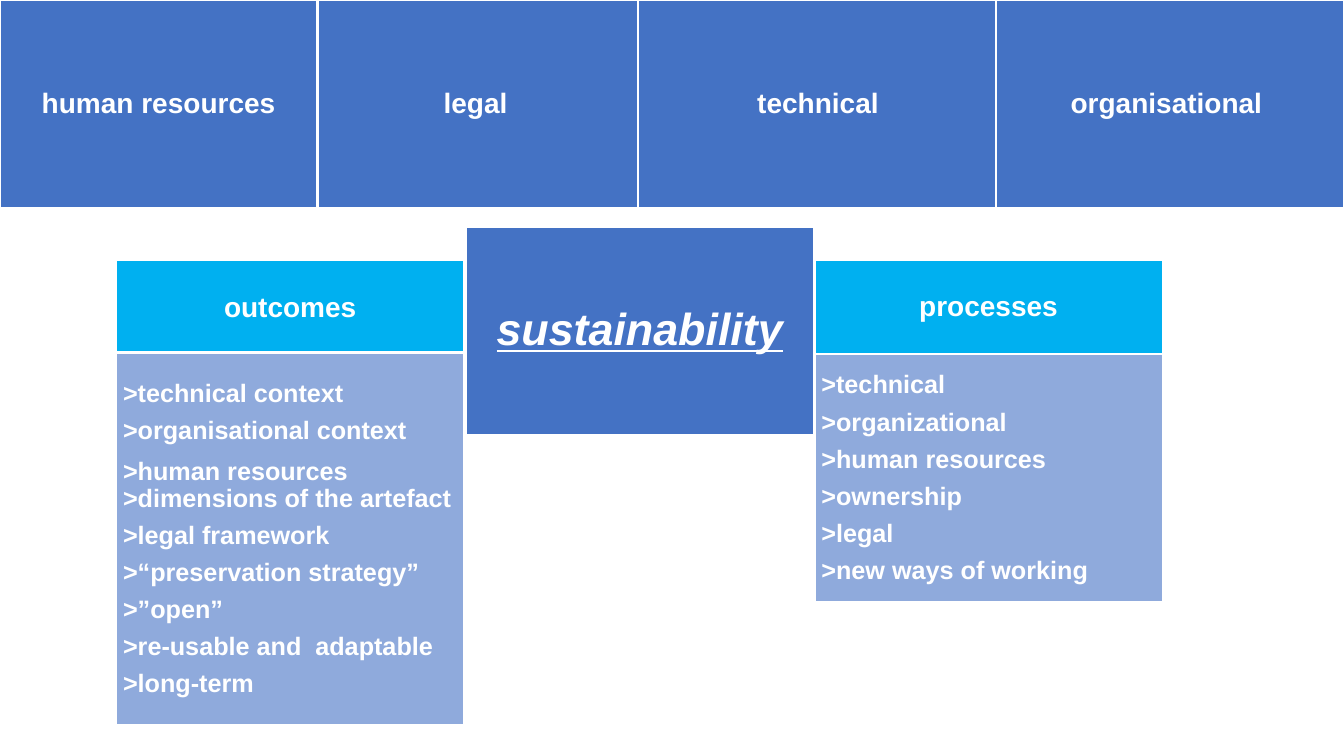
import pptx
import pptx.dml.color
import pptx.enum.text
import pptx.util
from pptx.util import Cm
from lxml import etree

COLOURS = {"dimension": "4472C4", "heading": "00B0F0", "list": "8FAADC", "white": "FFFFFF"}
ALIGN = pptx.enum.text.PP_ALIGN
BOX_WIDTH = 8.79
BAND_HEIGHT = 5.26


def rgb(name):
    return pptx.dml.color.RGBColor.from_string(COLOURS[name])


def fill_box(box, place, colour, lines, size, inset, align=ALIGN.CENTER):
    box.left, box.top, box.width, box.height = [Cm(length) for length in place]
    box.fill.solid()
    box.fill.fore_color.rgb = rgb(colour)
    box.line.color.rgb = rgb("white")
    box.line.width = pptx.util.Pt(2)
    frame = box.text_frame
    frame.text = "\n".join(lines)
    frame.word_wrap = True
    frame.auto_size = pptx.enum.text.MSO_AUTO_SIZE.NONE
    frame.vertical_anchor = pptx.enum.text.MSO_ANCHOR.MIDDLE
    frame.margin_left = frame.margin_right = Cm(inset)
    frame.margin_top = frame.margin_bottom = Cm(inset)
    for paragraph in frame.paragraphs:
        properties = paragraph._p.get_or_add_pPr()
        properties.set("marL", "0")
        properties.set("indent", "0")
        etree.SubElement(properties, pptx.oxml.ns.qn("a:buNone"))
        paragraph.alignment = align
        paragraph.line_spacing = 0.9
        paragraph.space_before = pptx.util.Pt(0)
        paragraph.space_after = pptx.util.Pt(7)
        for run in paragraph.runs:
            run.font.name = "Arial"
            run.font.size = pptx.util.Pt(size)
            run.font.bold = True
            run.font.color.rgb = rgb("white")


presentation = pptx.Presentation()
presentation.slide_width = Cm(33.87)
presentation.slide_height = Cm(19.05)
slide = presentation.slides.add_slide(presentation.slide_layouts[3])
sustainability, outcomes_list, processes_list = slide.placeholders

dimensions = [
    ("legal", 7.59, BOX_WIDTH),
    ("technical", 16.08, 9.07),
    ("organisational ", 25.1, BOX_WIDTH),
    ("human resources", 0, 8),
]
for dimension, left, width in dimensions:
    band = slide.shapes.add_shape(pptx.enum.shapes.MSO_SHAPE.RECTANGLE, 0, 0, 0, 0)
    band.shadow.inherit = False
    fill_box(band, (left, 0, width, BAND_HEIGHT), "dimension", [dimension], 20, 0.2)

fill_box(sustainability, (11.73, 5.72, BOX_WIDTH, BAND_HEIGHT), "dimension",
         ["sustainability"], 32, 0.33)
topic_font = sustainability.text_frame.paragraphs[0].runs[0].font
topic_font.italic = True
topic_font.underline = True

columns = [
    ("processes", processes_list, 20.52, 2.41, 8.92, 6.27, [
        ">technical",
        ">organizational",
        ">human resources",
        ">ownership",
        ">legal",
        ">new ways of working",
    ]),
    ("outcomes", outcomes_list, 2.92, 2.51, 8.89, 9.4, [
        ">technical context",
        ">organisational context",
        ">human resources",
        ">dimensions of the artefact",
        ">legal framework",
        ">“preservation strategy”",
        ">”open”",
        ">re-usable and  adaptable",
        ">long-term",
    ]),
]
for title, items_box, left, heading_height, list_top, list_height, items in columns:
    heading = slide.shapes.add_shape(pptx.enum.shapes.MSO_SHAPE.RECTANGLE, 0, 0, 0, 0)
    heading.shadow.inherit = False
    fill_box(heading, (left, 6.53, BOX_WIDTH, heading_height), "heading", [title], 20, 0.2)
    fill_box(items_box, (left, list_top, BOX_WIDTH, list_height), "list", items, 18, 0.18,
             ALIGN.LEFT)
    heading.element.addnext(items_box.element)

human_resources_item = outcomes_list.text_frame.paragraphs[2]
human_resources_item.line_spacing = 1.0
human_resources_item.space_after = pptx.util.Pt(0)

presentation.save("out.pptx")
